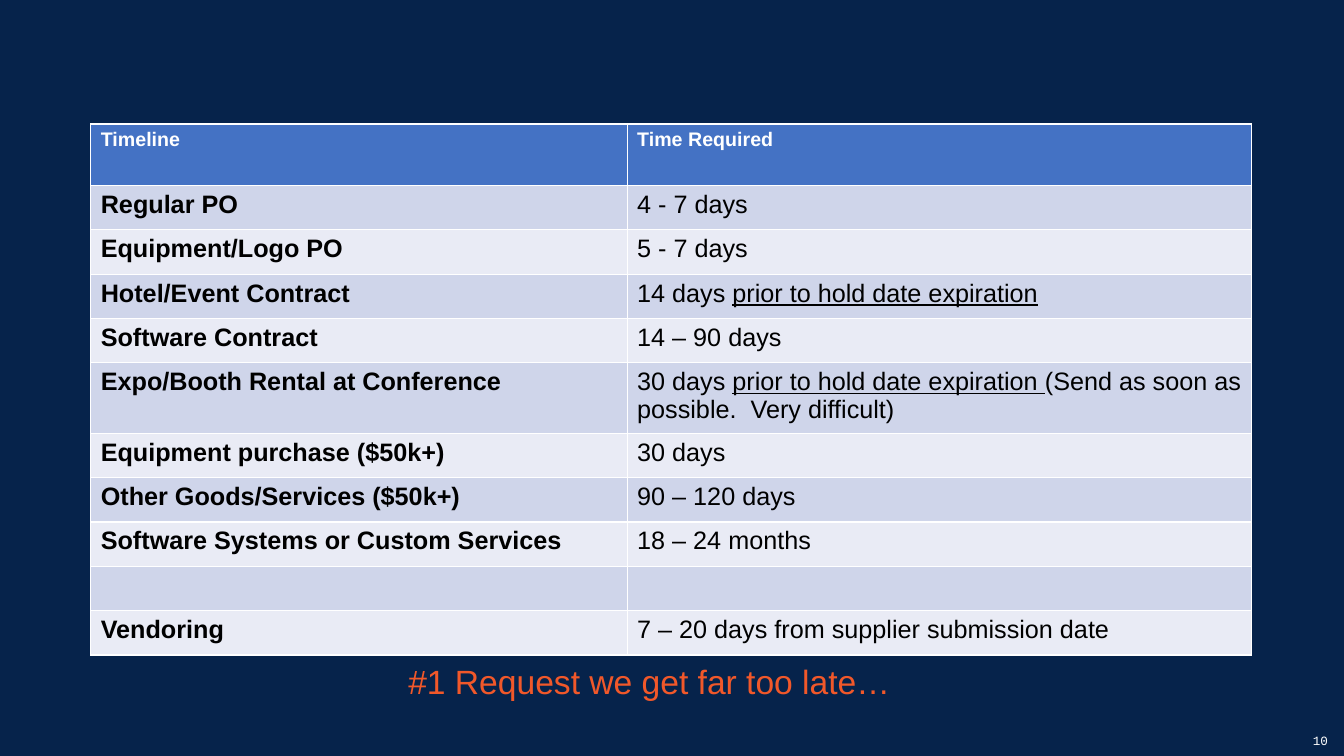
from pptx import Presentation
from pptx.dml.color import RGBColor
from pptx.enum.text import PP_ALIGN
from pptx.util import Inches, Pt

CENTER, RIGHT = PP_ALIGN.CENTER, PP_ALIGN.RIGHT

COLORS = {
    "navy": "06234B",
    "header": "4472C4",
    "odd": "CFD5EA",
    "even": "E9EBF5",
    "white": "FFFFFF",
    "black": "000000",
    "orange": "F1582A",
}

HEADER = ("Timeline", "Time Required")
# Each row: request, then the pieces of its time; every second piece is underlined.
ROWS = [
    ("Regular PO", ["4 - 7 days"]),
    ("Equipment/Logo PO", ["5 - 7 days"]),
    ("Hotel/Event Contract", ["14 days ", "prior to hold date expiration"]),
    ("Software Contract", ["14 – 90 days"]),
    ("Expo/Booth Rental at Conference",
     ["30 days ", "prior to hold date expiration ",
      "(Send as soon as possible.  Very difficult)"]),
    ("Equipment purchase ($50k+)", ["30 days"]),
    ("Other Goods/Services ($50k+)", ["90 – 120 days"]),
    ("Software Systems or Custom Services", ["18 – 24 months"]),
    ("", []),
    ("Vendoring", ["7 – 20 days from supplier submission date"]),
]
CAPTION = "#1 Request we get far too late…"
PAGE_NUMBER = "10"

TABLE_LEFT, TABLE_TOP = 0.9, 1.23
COLUMN_WIDTHS = (5.32, 6.19)
HEADER_HEIGHT, ROW_HEIGHT, TWO_LINE_HEIGHT = 0.61, 0.44, 0.65


def color(name):
    return RGBColor.from_string(COLORS[name])


def format_font(font, size, color_name, bold=False, name="Arial"):
    font.name = name
    font.size = Pt(size)
    font.bold = bold
    font.color.rgb = color(color_name)


def fill_cell(cell, pieces, fill_name, size, color_name, bold):
    """Write the pieces as runs, underlining every second one."""
    cell.fill.solid()
    cell.fill.fore_color.rgb = color(fill_name)
    paragraph = cell.text_frame.paragraphs[0]
    if not any(pieces):
        paragraph.font.size = Pt(size)
        return
    for index, piece in enumerate(pieces):
        run = paragraph.add_run()
        run.text = piece
        format_font(run.font, size, color_name, bold)
        run.font.underline = index % 2 == 1


def add_timeline_table(slide):
    heights = [HEADER_HEIGHT] + [
        TWO_LINE_HEIGHT if len(time) > 2 else ROW_HEIGHT for _, time in ROWS
    ]
    table = slide.shapes.add_table(
        len(heights), len(COLUMN_WIDTHS), Inches(TABLE_LEFT), Inches(TABLE_TOP),
        Inches(sum(COLUMN_WIDTHS)), Inches(sum(heights))).table
    for column, width in zip(table.columns, COLUMN_WIDTHS):
        column.width = Inches(width)
    for row, height in zip(table.rows, heights):
        row.height = Inches(height)

    for column_index, heading in enumerate(HEADER):
        fill_cell(table.cell(0, column_index), [heading], "header", 14, "white", True)
    for row_index, (request, time) in enumerate(ROWS, start=1):
        band = "odd" if row_index % 2 else "even"
        fill_cell(table.cell(row_index, 0), [request], band, 18, "black", True)
        fill_cell(table.cell(row_index, 1), time, band, 18, "black", False)


def add_label(slide, text, box, alignment, size, color_name, font_name):
    label = slide.shapes.add_textbox(*map(Inches, box))
    label.text_frame.word_wrap = True
    label.text_frame.text = text
    paragraph = label.text_frame.paragraphs[0]
    paragraph.alignment = alignment
    format_font(paragraph.runs[0].font, size, color_name, name=font_name)


def main():
    presentation = Presentation()
    presentation.slide_width = Inches(13.33)
    presentation.slide_height = Inches(7.5)
    slide = presentation.slides.add_slide(presentation.slide_layouts[6])
    slide.background.fill.solid()
    slide.background.fill.fore_color.rgb = color("navy")

    add_label(slide, PAGE_NUMBER, (10.27, 7.22, 3, 0.2), RIGHT, 9, "white", "Courier New")
    add_timeline_table(slide)
    add_label(slide, CAPTION, (1.89, 6.51, 9.1, 0.5), CENTER, 24, "orange", "Arial")
    presentation.save("out.pptx")


if __name__ == "__main__":
    main()
